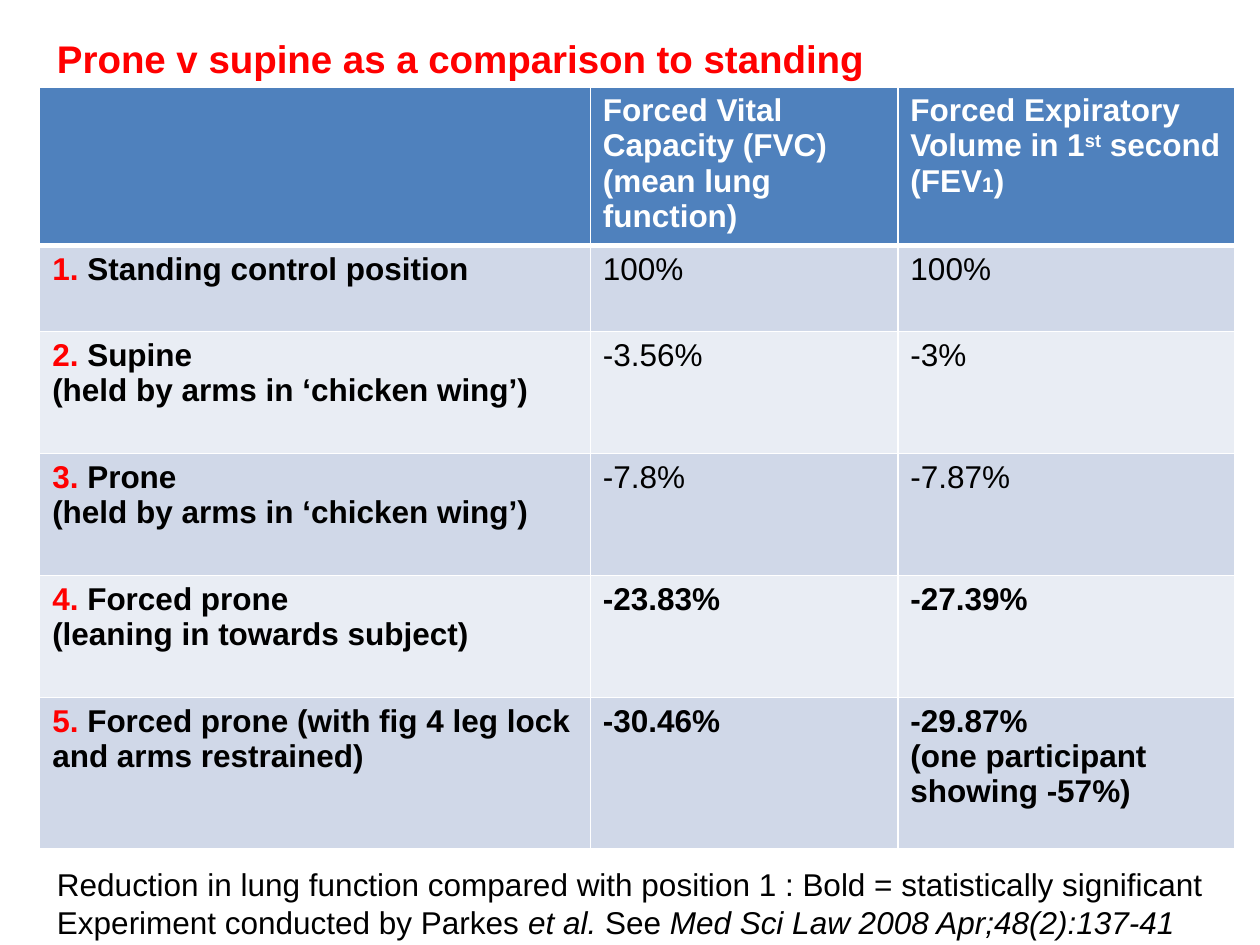
import pptx
import pptx.dml.color
import pptx.enum.text
import pptx.oxml
import pptx.oxml.ns
import pptx.util
from pptx.util import Cm

THEME = {
    "font": "Arial", "title_size": 22, "body_size": 18, "subscript_size": 12,
    "red": "FF0000", "black": "000000", "white": "FFFFFF",
    "header": "4F81BD", "bands": ("D0D8E8", "E9EDF4"),
}

# A text is a list of paragraphs; a paragraph is a list of (wording, format) runs.
PLAIN, BOLD, ITALIC = {}, {"bold": True}, {"italic": True}
HEAD = {"bold": True, "color": THEME["white"]}
NUMBER = {"bold": True, "color": THEME["red"]}

TITLE = [[("Prone v supine as a comparison to standing",
           {**NUMBER, "size": THEME["title_size"]})]]
HEADINGS = [
    [],
    [[("Forced Vital Capacity (FVC)", HEAD)], [("(mean lung function)", HEAD)]],
    [[("Forced Expiratory Volume in 1", HEAD), ("st", {**HEAD, "baseline": 30000}),
      (" second (FEV", HEAD), ("1", {**HEAD, "size": THEME["subscript_size"]}),
      (")", HEAD)]],
]
# Position lines, FVC lines, FEV1 lines, statistically significant
POSITIONS = [
    (["Standing control position"], ["100%"], ["100%"], False),
    (["Supine", "(held by arms in ‘chicken wing’)"], ["-3.56%"], ["-3%"], False),
    (["Prone", "(held by arms in ‘chicken wing’)"], ["-7.8%"], ["-7.87%"], False),
    (["Forced prone", "(leaning in towards subject)"], ["-23.83%"], ["-27.39%"], True),
    (["Forced prone (with fig 4 leg lock and arms restrained)"], ["-30.46%"],
     ["-29.87%", "(one participant showing -57%)"], True),
]
FOOTNOTE = [
    [("Reduction in lung function compared with position 1 : "
      "Bold = statistically significant", PLAIN)],
    [("Experiment conducted by Parkes ", PLAIN), ("et al. ", ITALIC),
     ("See ", PLAIN), ("Med Sci Law 2008 Apr;48(2):137-41", ITALIC)],
]

COLUMN_WIDTHS = (11.1, 6.2, 6.8)
ROW_HEIGHTS = (3.2, 1.73, 2.46, 2.46, 2.46, 3.05)


def rgb(code):
    return pptx.dml.color.RGBColor.from_string(code)


def write(frame, paragraphs):
    for index, runs in enumerate(paragraphs):
        paragraph = frame.add_paragraph() if index else frame.paragraphs[0]
        for wording, style in runs:
            run = paragraph.add_run()
            run.text = wording
            font_format = {
                "name": THEME["font"],
                "size": pptx.util.Pt(style.get("size", THEME["body_size"])),
                "bold": style.get("bold", False),
                "italic": style.get("italic", False),
            }
            for attribute, value in font_format.items():
                setattr(run.font, attribute, value)
            run.font.color.rgb = rgb(style.get("color", THEME["black"]))
            if "baseline" in style:
                run.font._element.set("baseline", str(style["baseline"]))


def add_text(slide, paragraphs, left, top, width, height):
    frame = slide.shapes.add_textbox(Cm(left), Cm(top), Cm(width), Cm(height)).text_frame
    frame.word_wrap = True
    frame.auto_size = pptx.enum.text.MSO_AUTO_SIZE.SHAPE_TO_FIT_TEXT
    write(frame, paragraphs)


def add_borders(cell, widths):
    """Draw white borders; widths maps a side (L, R, T, B) to points."""
    properties = cell._tc.get_or_add_tcPr()
    for side, points in widths.items():
        properties.append(pptx.oxml.parse_xml(
            f'<a:ln{side} {pptx.oxml.ns.nsdecls("a")} w="{pptx.util.Pt(points)}">'
            f'<a:solidFill><a:srgbClr val="{THEME["white"]}"/></a:solidFill>'
            f'</a:ln{side}>'))


def position_row(number, position, fvc, fev, significant):
    """Turn one position into the texts of its three cells."""
    label = [[(line, BOLD)] for line in position]
    label[0] = [(f"{number}.", NUMBER), (f" {position[0]}", BOLD)]
    style = BOLD if significant else PLAIN
    return [label] + [[[(line, style)] for line in lines] for lines in (fvc, fev)]


def add_results(slide, left, top):
    rows = [HEADINGS] + [position_row(number, *position)
                         for number, position in enumerate(POSITIONS, 1)]
    results = slide.shapes.add_table(
        len(rows), len(COLUMN_WIDTHS), Cm(left), Cm(top),
        Cm(sum(COLUMN_WIDTHS)), Cm(sum(ROW_HEIGHTS))).table
    for column, width in zip(results.columns, COLUMN_WIDTHS):
        column.width = Cm(width)
    for row, height in zip(results.rows, ROW_HEIGHTS):
        row.height = Cm(height)
    for r, texts in enumerate(rows):
        fill = THEME["bands"][(r - 1) % 2] if r else THEME["header"]
        borders = {"L": 1, "R": 1, "T": 3 if r == 1 else 1, "B": 1 if r else 3}
        for c, paragraphs in enumerate(texts):
            cell = results.cell(r, c)
            add_borders(cell, borders)
            cell.fill.solid()
            cell.fill.fore_color.rgb = rgb(fill)
            write(cell.text_frame, paragraphs)


def main():
    deck = pptx.Presentation()
    deck.slide_width, deck.slide_height = Cm(25.4), Cm(19.05)
    slide = deck.slides.add_slide(deck.slide_layouts[6])
    add_results(slide, 0.8, 1.75)
    add_text(slide, TITLE, 0.9, 0.58, 18.6, 1.2)
    add_text(slide, FOOTNOTE, 0.9, 17.32, 23.8, 1.8)
    deck.save("out.pptx")


if __name__ == "__main__":
    main()
